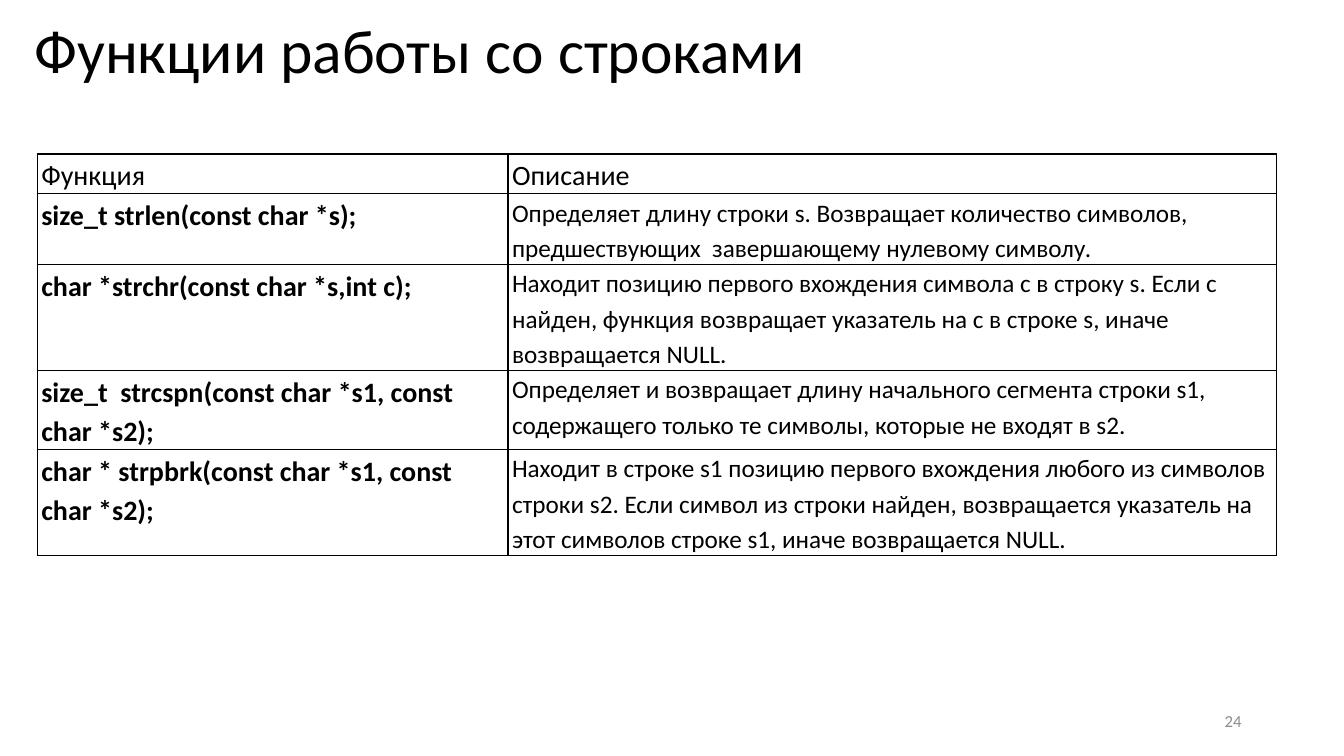
from lxml.etree import SubElement
from pptx import Presentation
from pptx.dml.color import RGBColor
from pptx.enum.text import MSO_ANCHOR, MSO_AUTO_SIZE, PP_ALIGN
from pptx.oxml.ns import qn
from pptx.util import Pt

COLORS = {"ink": "000000", "paper": "FFFFFF", "number": "8C8C8C"}
FONT = "Calibri"
HEADINGS = ("Функция", "Описание")
FUNCTIONS = [
    ("size_t strlen(const char *s);",
     "Определяет длину строки s. Возвращает количество символов, "
     "предшествующих  завершающему нулевому символу."),
    ("char *strchr(const char *s,int c);",
     "Находит позицию первого вхождения символа c в строку s. Если c найден, "
     "функция возвращает указатель на c в строке s, иначе возвращается NULL."),
    ("size_t  strcspn(const char *s1, const char *s2);",
     "Определяет и возвращает длину начального сегмента строки s1, "
     "содержащего только те символы, которые не входят в s2."),
    ("char * strpbrk(const char *s1, const char *s2);",
     "Находит в строке s1 позицию первого вхождения любого из символов строки s2. "
     "Если символ из строки найден, возвращается указатель на этот символов "
     "строке s1, иначе возвращается NULL."),
]
COLUMN_SHARES = (0.38, 0.62)
ROW_HEIGHTS = (28, 50, 75, 56, 75)


def write(frame, text, size, color="ink", bold=False, align=PP_ALIGN.LEFT,
          spacing=1.0, after=0):
    frame.word_wrap = True
    paragraph = frame.paragraphs[0]
    paragraph.alignment = align
    paragraph.line_spacing = spacing
    paragraph.space_after = Pt(after)
    run = paragraph.add_run()
    run.text = text
    run.font.name = FONT
    run.font.size = Pt(size)
    run.font.bold = bold
    run.font.color.rgb = RGBColor.from_string(COLORS[color])


def add_title(slide, left, top, width, height):
    title = slide.shapes.title
    title.left, title.top, title.width, title.height = map(Pt, (left, top, width, height))
    frame = title.text_frame
    frame.auto_size = MSO_AUTO_SIZE.NONE
    frame.vertical_anchor = MSO_ANCHOR.TOP
    frame.margin_top = Pt(7.6)
    write(frame, "Функции работы со строками", 44, spacing=0.9)


def border_cell(cell):
    properties = cell._tc.get_or_add_tcPr()
    for side in ("a:lnL", "a:lnR", "a:lnT", "a:lnB"):
        line = SubElement(properties, qn(side), w=str(Pt(1)))
        fill = SubElement(line, qn("a:solidFill"))
        SubElement(fill, qn("a:srgbClr"), val=COLORS["ink"])


def add_function_table(slide, left, top, width):
    rows = [HEADINGS, *FUNCTIONS]
    table = slide.shapes.add_table(
        len(rows), len(HEADINGS), Pt(left), Pt(top), Pt(width), Pt(sum(ROW_HEIGHTS))).table
    table.first_row = table.horz_banding = False
    for column, share in zip(table.columns, COLUMN_SHARES):
        column.width = Pt(width * share)
    for row, height in zip(table.rows, ROW_HEIGHTS):
        row.height = Pt(height)
    for row_index, entries in enumerate(rows):
        for column_index, entry in enumerate(entries):
            cell = table.cell(row_index, column_index)
            cell.margin_left = cell.margin_right = Pt(2.9)
            cell.margin_top = cell.margin_bottom = 0
            border_cell(cell)
            cell.fill.background()
            is_heading = row_index == 0
            is_signature = column_index == 0 and not is_heading
            write(cell.text_frame, entry, 20 if is_heading or is_signature else 18,
                  bold=is_signature, spacing=1.15, after=10)


def add_page_number(slide, left, top, width, height):
    frame = slide.shapes.add_textbox(Pt(left), Pt(top), Pt(width), Pt(height)).text_frame
    frame.vertical_anchor = MSO_ANCHOR.MIDDLE
    write(frame, "24", 12, color="number", align=PP_ALIGN.RIGHT)


def main():
    presentation = Presentation()
    presentation.slide_width, presentation.slide_height = Pt(960), Pt(540)
    slide = presentation.slides.add_slide(presentation.slide_layouts[5])
    slide.background.fill.solid()
    slide.background.fill.fore_color.rgb = RGBColor.from_string(COLORS["paper"])
    add_function_table(slide, 26.6, 110, 885)
    add_title(slide, 17.3, 7.2, 901.4, 90)
    add_page_number(slide, 678, 500.5, 216, 28.8)
    presentation.save("out.pptx")


if __name__ == "__main__":
    main()
